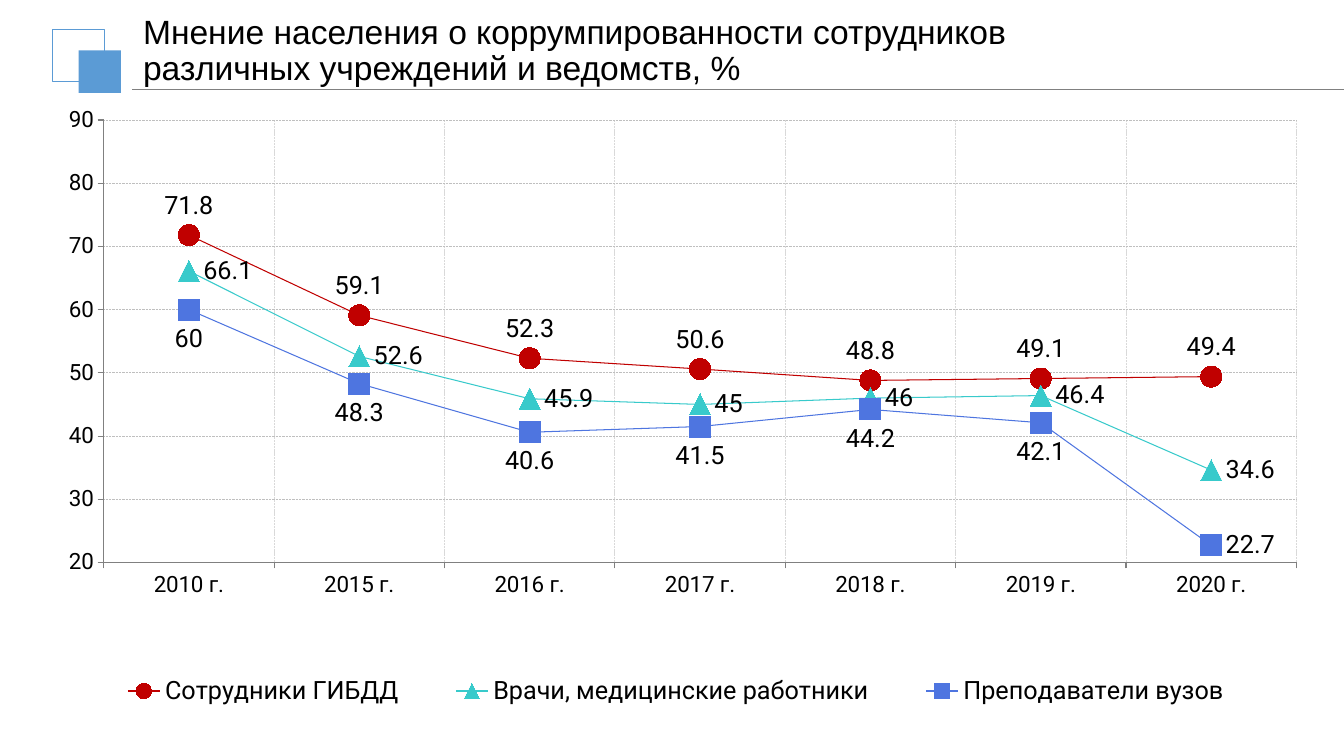
from pptx import Presentation
from pptx.chart.data import CategoryChartData
from pptx.dml.color import RGBColor
from pptx.enum import chart as ch, dml, shapes, text
from pptx.oxml import parse_xml
from pptx.oxml.ns import nsdecls
from pptx.util import Cm, Pt

BLACK = RGBColor(0x00, 0x00, 0x00)
WHITE = RGBColor(0xFF, 0xFF, 0xFF)
BLUE = RGBColor(0x5B, 0x9B, 0xD5)
GRAY = RGBColor(0x80, 0x80, 0x80)
GRID_CATEGORY = RGBColor(0xD9, 0xD9, 0xD9)
GRID_VALUE = RGBColor(0xBF, 0xBF, 0xBF)
RED = RGBColor(0xC0, 0x00, 0x00)
TEAL = RGBColor(0x38, 0xCA, 0xCB)
INDIGO = RGBColor(0x4E, 0x75, 0xE0)

YEARS = ["2010 г.", "2015 г.", "2016 г.", "2017 г.", "2018 г.", "2019 г.", "2020 г."]
MARKER, LABEL = ch.XL_MARKER_STYLE, ch.XL_LABEL_POSITION
SERIES = [
    ("Сотрудники ГИБДД", (71.8, 59.1, 52.3, 50.6, 48.8, 49.1, 49.4),
     RED, MARKER.CIRCLE, LABEL.ABOVE),
    ("Врачи, медицинские работники", (66.1, 52.6, 45.9, 45, 46, 46.4, 34.6),
     TEAL, MARKER.TRIANGLE, LABEL.RIGHT),
    ("Преподаватели вузов", (60, 48.3, 40.6, 41.5, 44.2, 42.1, 22.7),
     INDIGO, MARKER.SQUARE, LABEL.BELOW),
]


def set_font(font, name="Roboto", size=18, color=BLACK):
    font.name, font.size = name, Pt(size)
    font.color.rgb = color


def set_line(line, color, width=0.75, dash=None):
    line.color.rgb = color
    line.width = Pt(width)
    if dash:
        line.dash_style = dash


def write_text(tf, content, line_spacing=1.0, **font):
    p = tf.paragraphs[0]
    p.alignment = text.PP_ALIGN.LEFT
    p.line_spacing = line_spacing
    r = p.add_run()
    r.text = content
    set_font(r.font, **font)


def add_square(slide, left, top, side, fill=None, line=None):
    sp = slide.shapes.add_shape(shapes.MSO_SHAPE.RECTANGLE,
                                Cm(left), Cm(top), Cm(side), Cm(side))
    sp.shadow.inherit = False
    if fill:
        sp.fill.solid()
        sp.fill.fore_color.rgb = fill
    else:
        sp.fill.background()
    if line:
        set_line(sp.line, line)
    else:
        sp.line.fill.background()


def add_rule(slide, left, right, y):
    sp = slide.shapes.add_connector(shapes.MSO_CONNECTOR.STRAIGHT,
                                    Cm(left), Cm(y), Cm(right), Cm(y))
    set_line(sp.line, GRAY)
    sp._element.spPr.append(parse_xml(f"<a:effectLst {nsdecls('a')}/>"))


def add_title(slide, content):
    sp = slide.shapes.title
    sp.left, sp.top, sp.width, sp.height = Cm(3.35), Cm(0.56), Cm(24.03), Cm(1.47)
    tf = sp.text_frame
    tf.word_wrap = True
    tf.auto_size = text.MSO_AUTO_SIZE.NONE
    tf.vertical_anchor = text.MSO_ANCHOR.MIDDLE
    write_text(tf, content, line_spacing=0.9, name="Arial", size=24)


def set_layout(element, x, y, w, h, inner=False):
    """Place the plot area or the legend by fractions of the chart."""
    for old in element.findall(element.tag.split("}")[0] + "}layout"):
        element.remove(old)
    target = '<c:layoutTarget val="inner"/>' if inner else ""
    layout = parse_xml(
        f'<c:layout {nsdecls("c")}><c:manualLayout>{target}'
        '<c:xMode val="edge"/><c:yMode val="edge"/>'
        f'<c:x val="{x}"/><c:y val="{y}"/><c:w val="{w}"/><c:h val="{h}"/>'
        '</c:manualLayout></c:layout>')
    element.insert(0 if inner else 1, layout)


def format_axis(axis, grid_color, dash):
    axis.has_major_gridlines = True
    set_line(axis.major_gridlines.format.line, grid_color, 0.5, dash)
    set_line(axis.format.line, GRAY)
    axis.major_tick_mark = ch.XL_TICK_MARK.OUTSIDE
    axis.minor_tick_mark = ch.XL_TICK_MARK.NONE
    set_font(axis.tick_labels.font, size=16)


def format_series(series, color, marker, position):
    series.smooth = False
    set_line(series.format.line, color)
    series.marker.style = marker
    series.marker.size = 15
    series.marker.format.fill.solid()
    series.marker.format.fill.fore_color.rgb = color
    set_line(series.marker.format.line, WHITE)
    labels = series.data_labels
    labels.show_value = True
    labels.position = position
    set_font(labels.font)


def add_opinion_chart(slide):
    data = CategoryChartData()
    data.categories = YEARS
    for name, values, *_ in SERIES:
        data.add_series(name, values)
    chart = slide.shapes.add_chart(ch.XL_CHART_TYPE.LINE_MARKERS, Cm(0), Cm(2.64),
                                   Cm(33.07), Cm(16.79), data).chart
    chart.has_title = False
    set_font(chart.font)
    plot = chart.plots[0]
    plot.vary_by_categories = False

    # Axes
    format_axis(chart.category_axis, GRID_CATEGORY, dml.MSO_LINE.SQUARE_DOT)
    axis = chart.value_axis
    format_axis(axis, GRID_VALUE, dml.MSO_LINE.ROUND_DOT)
    axis.minimum_scale, axis.maximum_scale, axis.major_unit = 20, 90, 10

    # Series; the last point of the lowest one is labelled at its right
    for series, (_, _, color, marker, position) in zip(plot.series, SERIES):
        format_series(series, color, marker, position)
    last = plot.series[2].points[len(YEARS) - 1].data_label
    set_font(last.font)
    last.position = LABEL.RIGHT

    # Legend and plot area
    chart.has_legend = True
    chart.legend.position = ch.XL_LEGEND_POSITION.BOTTOM
    chart.legend.include_in_layout = False
    set_font(chart.legend.font)
    set_layout(chart.legend._element, 0.06, 0.83, 0.91, 0.1)
    set_layout(chart._chartSpace.chart.plotArea, 0.079, 0.023, 0.909, 0.664, inner=True)


def main():
    prs = Presentation()
    prs.slide_width, prs.slide_height = Cm(33.87), Cm(19.05)
    slide = prs.slides.add_slide(prs.slide_layouts[5])

    # Header
    add_square(slide, 1.32, 0.74, 1.32, line=BLUE)
    add_square(slide, 1.98, 1.27, 1.07, fill=BLUE)
    add_rule(slide, 3.33, 33.87, 2.26)
    add_title(slide, "Мнение населения о коррумпированности сотрудников "
                     "различных учреждений и ведомств, %")

    # Chart
    add_opinion_chart(slide)
    prs.save("out.pptx")


if __name__ == "__main__":
    main()
